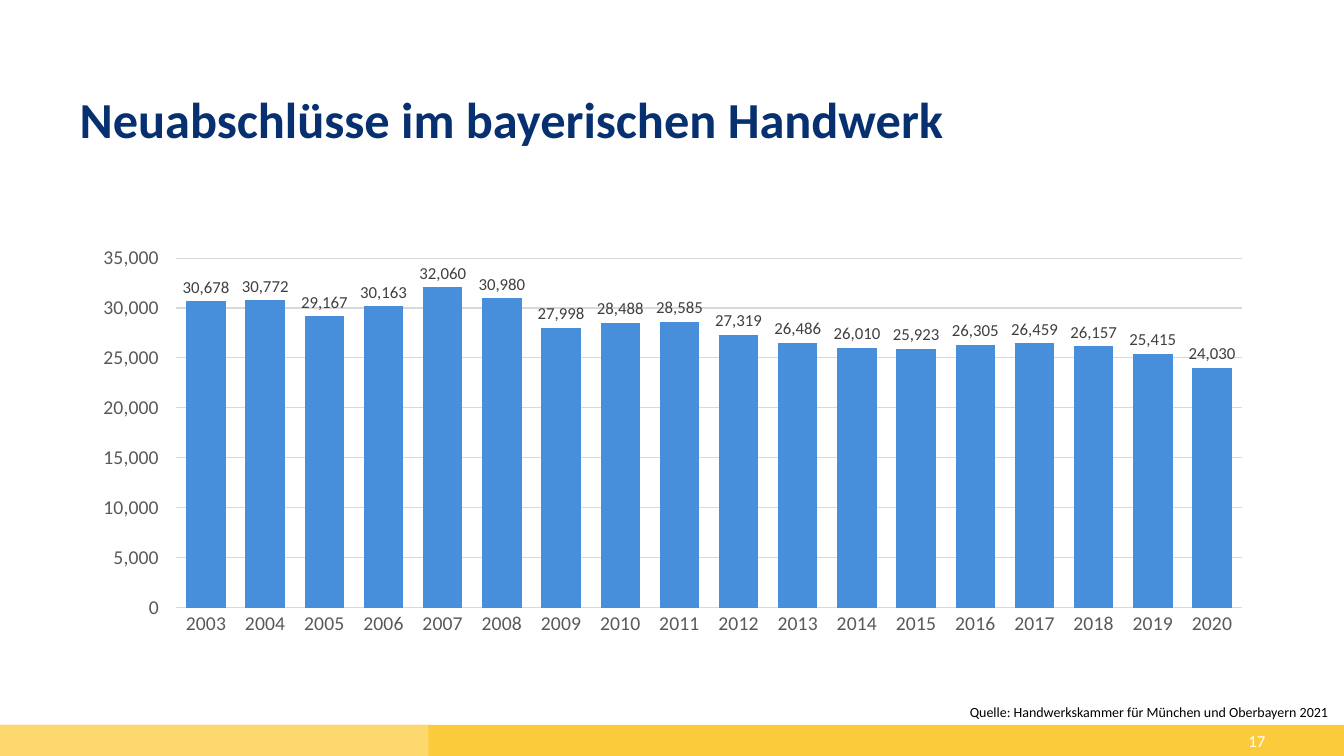
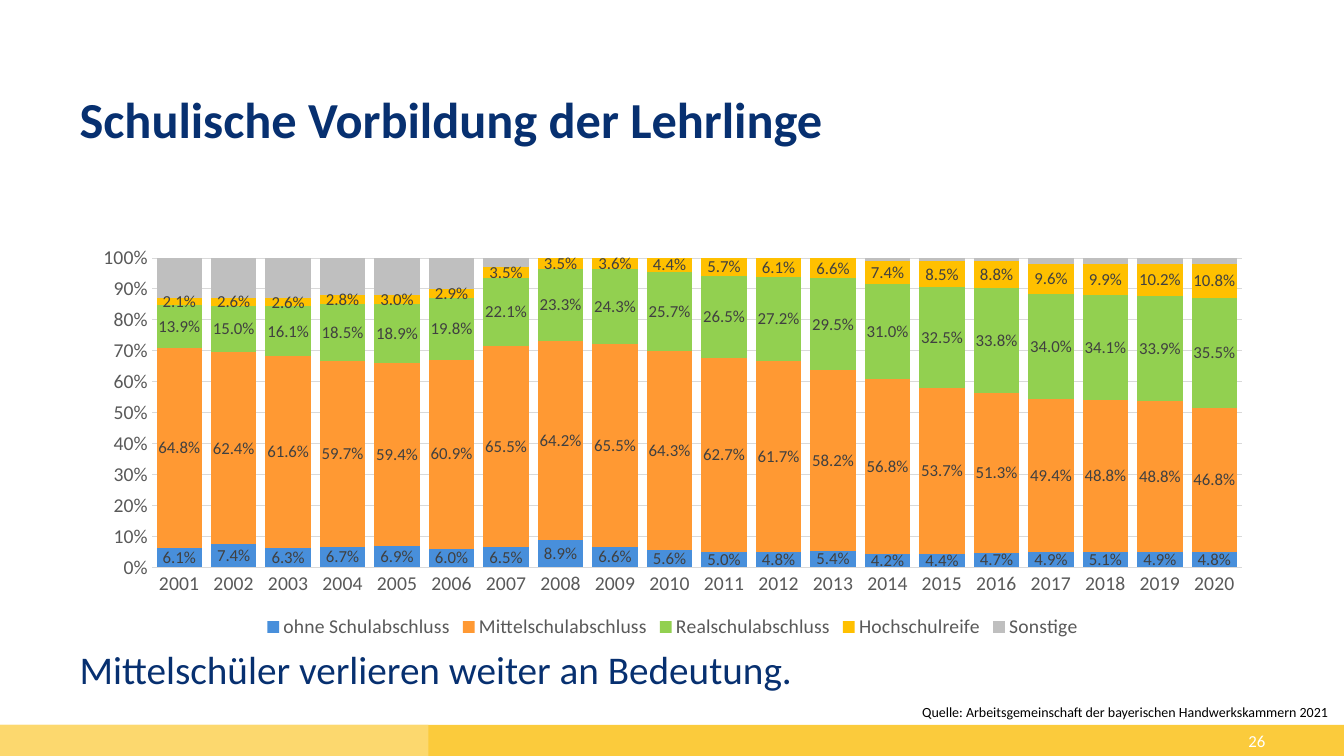
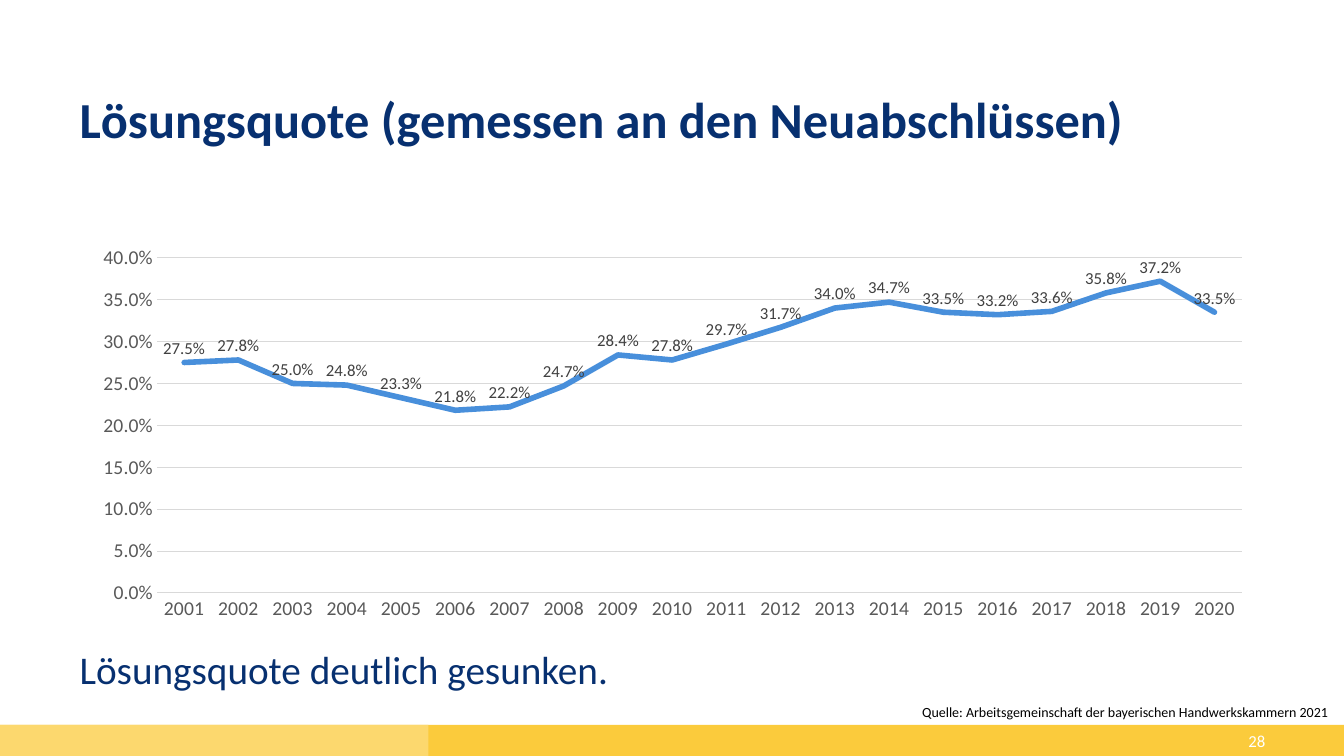
"""Build three chart slides on apprenticeships in the Bavarian crafts."""
from dataclasses import dataclass
from typing import Any, Optional

from pptx import Presentation
from pptx.chart.data import CategoryChartData as ChartData
from pptx.dml.color import RGBColor
from pptx.enum.chart import XL_CHART_TYPE as CT
from pptx.enum.chart import XL_LABEL_POSITION as LP
from pptx.enum.chart import XL_LEGEND_POSITION as LEG
from pptx.enum.chart import XL_MARKER_STYLE as MK
from pptx.enum.chart import XL_TICK_MARK as TM
from pptx.enum.shapes import MSO_SHAPE as SHAPE
from pptx.enum.text import MSO_ANCHOR as ANCHOR
from pptx.enum.text import PP_ALIGN as AL
from pptx.util import Inches, Pt

FONT = "Calibri"
NAVY, BLUE, WHITE, BLACK = "073070", "488FDB", "FFFFFF", "000000"
ORANGE, GREEN, AMBER, SILVER = "FF9933", "92D050", "FFC000", "BFBFBF"
AXIS_TEXT, LABEL_TEXT, GRID = "595959", "404040", "D9D9D9"
BAND, BAND_LIGHT = "FBCB3C", "FCD86E"
WIDTH, HEIGHT = 13.33, 7.5
LEFT, CONTENT_W = 0.79, 11.76
BAND_TOP, BAND_H = 7.19, 0.31
CHART_TOP = 2.36


@dataclass(frozen=True)
class Series:
    name: str
    color: str
    values: tuple[float, ...]
    labelled: bool = True


@dataclass(frozen=True)
class ChartSpec:
    kind: CT
    height: float
    first_year: int
    series: tuple[Series, ...]
    maximum: float
    step: float
    axis_format: str
    label_format: str
    plot: dict[str, Any]
    label_position: Optional[LP] = None
    legend: bool = False


@dataclass(frozen=True)
class Page:
    number: int
    title: str
    source: str
    chart: ChartSpec
    message: str = ""


ASSOCIATION = "Quelle: Arbeitsgemeinschaft der bayerischen Handwerkskammern 2021"

PAGES = (
    Page(
        17,
        "Neuabschlüsse im bayerischen Handwerk",
        "Quelle: Handwerkskammer für München und Oberbayern 2021",
        ChartSpec(
            CT.COLUMN_CLUSTERED, 4.03, 2003,
            (Series("Neuabschlüsse", BLUE, (
                30678, 30772, 29167, 30163, 32060, 30980, 27998, 28488, 28585,
                27319, 26486, 26010, 25923, 26305, 26459, 26157, 25415, 24030)),),
            35000, 5000, r"#,##0\ \ \ ", "#,##0",
            {"gap_width": 50, "overlap": -27}, LP.OUTSIDE_END,
        ),
    ),
    Page(
        26,
        "Schulische Vorbildung der Lehrlinge",
        ASSOCIATION,
        ChartSpec(
            CT.COLUMN_STACKED_100, 4.02, 2001,
            (
                Series("ohne Schulabschluss", BLUE, (
                    0.061, 0.074, 0.063, 0.067, 0.069, 0.060, 0.065, 0.089, 0.066, 0.056,
                    0.050, 0.048, 0.054, 0.042, 0.044, 0.047, 0.049, 0.051, 0.049, 0.048)),
                Series("Mittelschulabschluss", ORANGE, (
                    0.648, 0.624, 0.616, 0.597, 0.594, 0.609, 0.655, 0.642, 0.655, 0.643,
                    0.627, 0.617, 0.582, 0.568, 0.537, 0.513, 0.494, 0.488, 0.488, 0.468)),
                Series("Realschulabschluss", GREEN, (
                    0.139, 0.150, 0.161, 0.185, 0.189, 0.198, 0.221, 0.233, 0.243, 0.257,
                    0.265, 0.272, 0.295, 0.310, 0.325, 0.338, 0.340, 0.341, 0.339, 0.355)),
                Series("Hochschulreife", AMBER, (
                    0.021, 0.026, 0.026, 0.028, 0.030, 0.029, 0.035, 0.035, 0.036, 0.044,
                    0.057, 0.061, 0.066, 0.074, 0.085, 0.088, 0.096, 0.099, 0.102, 0.108)),
                Series("Sonstige", SILVER, (
                    0.13, 0.13, 0.13, 0.12, 0.12, 0.1, 0.03, 0, 0, 0,
                    0, 0, 0, 0.01, 0.01, 0.01, 0.02, 0.02, 0.02, 0.02), False),
            ),
            1, 0.1, "0%", "0.0%",
            {"gap_width": 20, "overlap": 100}, legend=True,
        ),
        "Mittelschüler verlieren weiter an Bedeutung.",
    ),
    Page(
        28,
        "Lösungsquote (gemessen an den Neuabschlüssen)",
        ASSOCIATION,
        ChartSpec(
            CT.LINE, 3.88, 2001,
            (Series("Lösungsquote", BLUE, (
                0.275, 0.278, 0.250, 0.248, 0.233, 0.218, 0.222, 0.247, 0.284, 0.278,
                0.297, 0.317, 0.340, 0.347, 0.335, 0.332, 0.336, 0.358, 0.372, 0.335)),),
            0.4, 0.05, "0.0%", "0.0%", {}, LP.ABOVE,
        ),
        "Lösungsquote deutlich gesunken.",
    ),
)


def rgb(color: str) -> RGBColor:
    return RGBColor.from_string(color)


def assign(obj: Any, **values: Any) -> None:
    for name, value in values.items():
        setattr(obj, name, value)


def set_font(font: Any, size: float, color: str, bold: bool = False) -> None:
    assign(font, name=FONT, size=Pt(size), bold=bold)
    font.color.rgb = rgb(color)


def set_line(line: Any, color: str, width: float) -> None:
    line.color.rgb = rgb(color)
    line.width = Pt(width)


def add_band(s: Any, width: float, color: str) -> None:
    sp = s.shapes.add_shape(SHAPE.RECTANGLE, 0, Inches(BAND_TOP), Inches(width), Inches(BAND_H))
    sp.shadow.inherit = False
    sp.fill.solid()
    sp.fill.fore_color.rgb = rgb(color)
    sp.line.fill.background()


def add_text(s: Any, text: str, box: tuple[float, float, float, float], size: float,
             color: str, bold: bool = False, **layout: Any) -> None:
    tf = s.shapes.add_textbox(*map(Inches, box)).text_frame
    assign(tf, word_wrap=True, vertical_anchor=layout.pop("anchor", ANCHOR.TOP),
           margin_left=0, margin_right=0, margin_top=0, margin_bottom=0)
    p = tf.paragraphs[0]
    assign(p, **layout)
    r = p.add_run()
    r.text = text
    set_font(r.font, size, color, bold)


def style_axes(chart: Any, spec: ChartSpec) -> None:
    cat, val = chart.category_axis, chart.value_axis
    for axis in (cat, val):
        assign(axis, major_tick_mark=TM.NONE, minor_tick_mark=TM.NONE)
        set_font(axis.tick_labels.font, 14, AXIS_TEXT)
    set_line(cat.format.line, GRID, 0.75)
    val.format.line.fill.background()
    assign(val, minimum_scale=0, maximum_scale=spec.maximum, major_unit=spec.step,
           has_major_gridlines=True)
    set_line(val.major_gridlines.format.line, GRID, 0.75)
    assign(val.tick_labels, number_format=spec.axis_format, number_format_is_linked=False)


def style_series(ser: Any, data: Series, spec: ChartSpec) -> None:
    if spec.kind == CT.LINE:
        ser.smooth = False
        ser.marker.style = MK.NONE
        set_line(ser.format.line, data.color, 4)
        ser._element.xpath("c:spPr/a:ln")[0].set("cap", "rnd")
    else:
        ser.invert_if_negative = False
        ser.format.fill.solid()
        ser.format.fill.fore_color.rgb = rgb(data.color)
    if data.labelled:
        labels = ser.data_labels
        assign(labels, show_value=True, number_format=spec.label_format,
               number_format_is_linked=False)
        set_font(labels.font, 12, LABEL_TEXT)
        if spec.label_position is not None:
            labels.position = spec.label_position


def add_chart(s: Any, spec: ChartSpec) -> None:
    data = ChartData(number_format=spec.label_format)
    count = len(spec.series[0].values)
    data.categories = [str(spec.first_year + i) for i in range(count)]
    for item in spec.series:
        data.add_series(item.name, item.values)
    box = map(Inches, (LEFT, CHART_TOP, CONTENT_W, spec.height))
    chart = s.shapes.add_chart(spec.kind, *box, data).chart
    set_font(chart.font, 10, BLACK)
    assign(chart, has_title=False, has_legend=spec.legend)
    if spec.legend:
        assign(chart.legend, position=LEG.BOTTOM, include_in_layout=False)
        set_font(chart.legend.font, 14, AXIS_TEXT)
    plot = chart.plots[0]
    assign(plot, vary_by_categories=False, **spec.plot)
    style_axes(chart, spec)
    for ser, item in zip(plot.series, spec.series):
        style_series(ser, item, spec)


def add_page(prs: Any, page: Page) -> None:
    s = prs.slides.add_slide(prs.slide_layouts[6])
    add_band(s, WIDTH, BAND)
    add_band(s, 4.25, BAND_LIGHT)
    add_text(s, page.title, (LEFT, 0.94, CONTENT_W, 1.05), 36, NAVY, True, line_spacing=0.9)
    add_text(s, str(page.number), (9.55, BAND_TOP, 3, BAND_H), 12, WHITE,
             alignment=AL.RIGHT, anchor=ANCHOR.MIDDLE)
    add_chart(s, page.chart)
    add_text(s, page.source, (8.17, 6.98, 5, 0.17), 10, BLACK, alignment=AL.RIGHT)
    if page.message:
        add_text(s, page.message, (LEFT, 6.4, 11.45, 0.64), 28, NAVY)


def main() -> None:
    prs = Presentation()
    assign(prs, slide_width=Inches(WIDTH), slide_height=Inches(HEIGHT))
    for page in PAGES:
        add_page(prs, page)
    prs.save("out.pptx")


if __name__ == "__main__":
    main()
